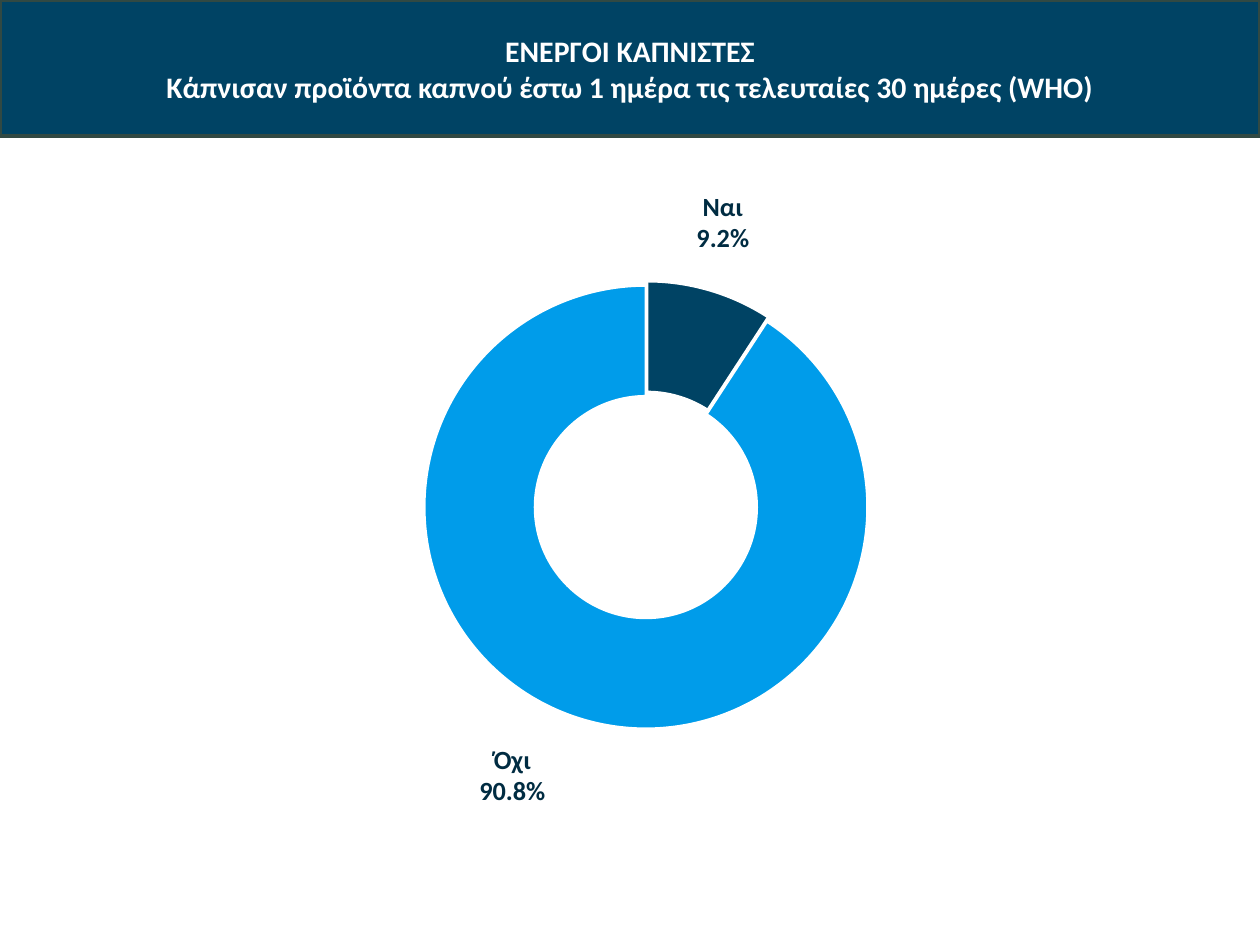
from copy import deepcopy

from lxml import etree
from pptx import Presentation
from pptx.chart.data import CategoryChartData
from pptx.dml.color import RGBColor
from pptx.enum.chart import XL_CHART_TYPE
from pptx.enum.shapes import MSO_SHAPE
from pptx.enum.text import MSO_ANCHOR, PP_ALIGN
from pptx.oxml import parse_xml
from pptx.oxml.ns import nsdecls, qn
from pptx.util import Inches, Pt

# Content
TITLE = ["ΕΝΕΡΓΟΙ ΚΑΠΝΙΣΤΕΣ",
         "Κάπνισαν προϊόντα καπνού έστω 1 ημέρα τις τελευταίες 30 ημέρες (WHO)"]
# answer, percent, fill, label offset from the ring (fractions of the chart), explosion
ANSWERS = [("Ναι", 9.2, "navy", (0.025, -0.166), 4),
           ("Όχι", 90.8, "sky", (-0.076, 0.15), 0)]
THEME = dict(font="Calibri", title=17, chart=18, label=15, navy="004364", sky="009CEA",
             edge="314943", ink="002C42", black="000000", white="FFFFFF")
PLOT = dict(x=0.313, y=0.148, w=0.391, h=0.609)
HOLE = 34


def color(name):
    return RGBColor.from_string(THEME[name])


def set_font(font, size, ink, bold=False):
    font.name, font.size, font.bold = THEME["font"], Pt(THEME[size]), bold
    font.color.rgb = color(ink)


def add_text(p, text, align=PP_ALIGN.CENTER, **fmt):
    p.alignment = align
    r = p.add_run()
    r.text = text
    set_font(r.font, **fmt)


def manual_layout(**values):
    items = "".join(f'<c:{k} val="{v}"/>' for k, v in values.items())
    return parse_xml(f'<c:layout {nsdecls("c")}><c:manualLayout>{items}'
                     '</c:manualLayout></c:layout>')


prs = Presentation()
prs.slide_width, prs.slide_height = Inches(10), Inches(7.5)
s = prs.slides.add_slide(prs.slide_layouts[5])

# Banner, behind the title
banner = s.shapes.add_shape(MSO_SHAPE.RECTANGLE, 0, 0, Inches(10), Inches(1.08))
banner.shadow.inherit = False
banner.fill.solid()
banner.fill.fore_color.rgb = color("navy")
banner.line.color.rgb = color("edge")
banner.line.width = Pt(2)
s.shapes.title._element.addprevious(banner._element)

# Title
title = s.shapes.title
title.left, title.top, title.width, title.height = 0, 0, Inches(10), Inches(1.09)
tf = title.text_frame
tf.word_wrap = True
tf.vertical_anchor = MSO_ANCHOR.MIDDLE
p = tf.paragraphs[0]
for i, line in enumerate(TITLE):
    if i:
        p.add_line_break()
    add_text(p, line, size="title", ink="white", bold=True)

# Doughnut chart
data = CategoryChartData()
data.categories = [a[0] for a in ANSWERS]
data.add_series("Series 1", [a[1] for a in ANSWERS])
chart = s.shapes.add_chart(XL_CHART_TYPE.DOUGHNUT, Inches(0.55), Inches(1.41),
                           Inches(9), Inches(5.78), data).chart
chart.has_legend = chart.has_title = False
set_font(chart.font, "chart", "black")
plot = chart.plots[0]
plot.vary_by_categories = True
plot._element.find(qn("c:holeSize")).set("val", str(HOLE))
area = plot._element.getparent()
for old in area.findall(qn("c:layout")):
    area.remove(old)
area.insert(0, manual_layout(layoutTarget="inner", xMode="edge", yMode="edge", **PLOT))

# Labels shared by the series
ser = plot.series[0]
labels = ser.data_labels
labels.show_value = False
labels.show_category_name = labels.show_percentage = True
labels.number_format, labels.number_format_is_linked = "0.0%", False
set_font(labels.font, "label", "ink", bold=True)
box = labels._element
sep = etree.Element(qn("c:separator"))
sep.text = "\n"
box.find(qn("c:showBubbleSize")).addnext(sep)
leader = box.find(qn("c:showLeaderLines"))
if leader is not None:
    leader.set("val", "0")
shared = [el for el in box if el is not leader]

# Slices, each with its label moved off the ring
for i, (_, _, fill, (dx, dy), explosion) in enumerate(ANSWERS):
    fmt = ser.points[i].format
    fmt.fill.solid()
    fmt.fill.fore_color.rgb = color(fill)
    fmt.line.color.rgb = color("white")
    fmt.line.width = Pt(1.5)
    if explosion:
        dpt = ser._element.findall(qn("c:dPt"))[i]
        dpt.find(qn("c:spPr")).addprevious(
            parse_xml(f'<c:explosion {nsdecls("c")} val="{explosion}"/>'))
    label = parse_xml(f'<c:dLbl {nsdecls("c")}><c:idx val="{i}"/></c:dLbl>')
    label.append(manual_layout(x=dx, y=dy))
    label.extend(deepcopy(el) for el in shared)
    box.insert(i, label)

prs.save("out.pptx")
